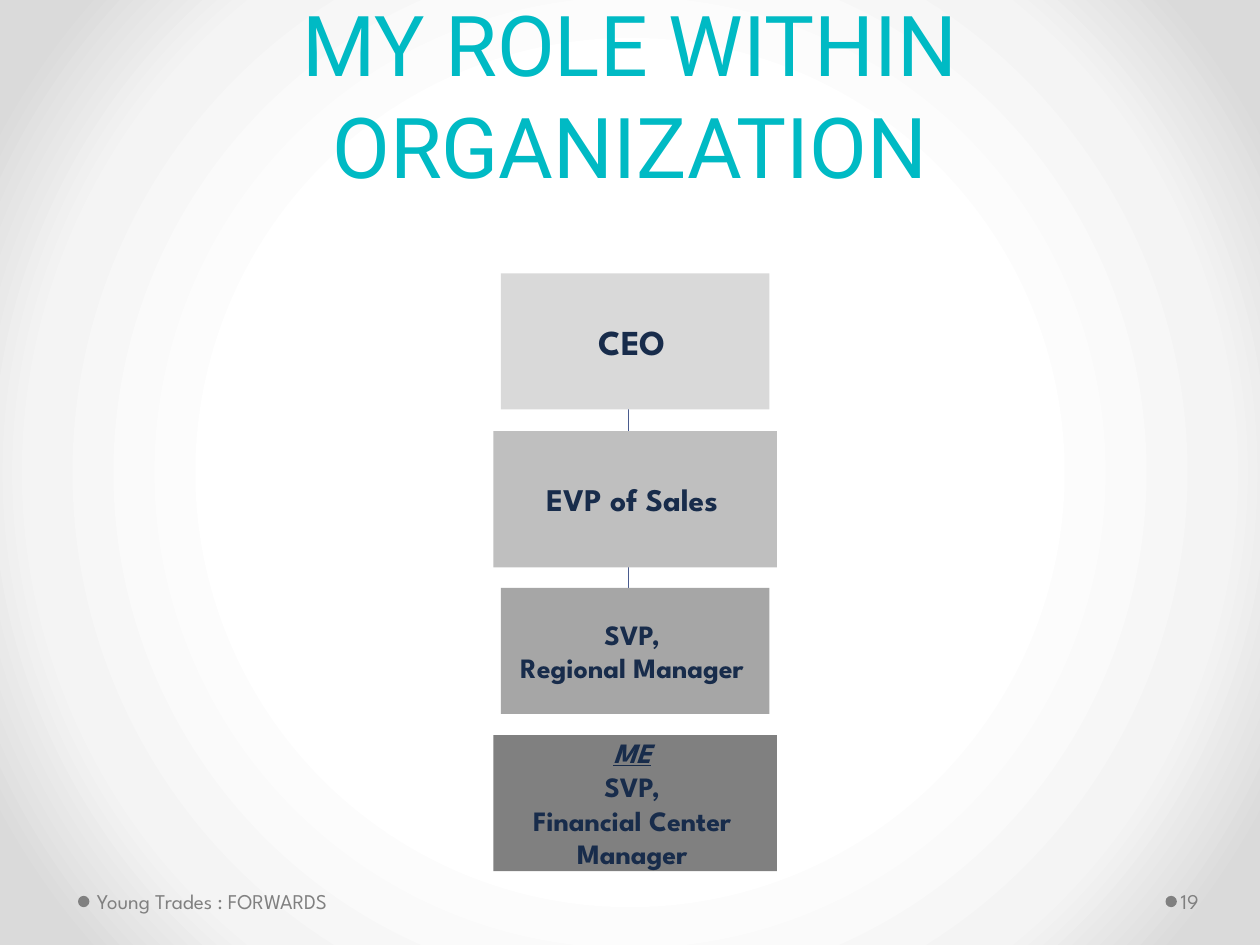
from pptx import Presentation
from pptx.dml.color import RGBColor
from pptx.enum.shapes import MSO_CONNECTOR, MSO_SHAPE
from pptx.enum.text import MSO_ANCHOR, PP_ALIGN
from pptx.oxml.ns import qn
from pptx.util import Pt
from lxml.etree import SubElement

TEAL = RGBColor(0x00, 0xBA, 0xC4)
NAVY = RGBColor(0x18, 0x2C, 0x4B)
LINE_BLUE = RGBColor(0x4A, 0x5B, 0x8E)
WHITE = RGBColor(0xFF, 0xFF, 0xFF)
PALE_GRAY = RGBColor(0xF4, 0xF4, 0xF4)
EDGE_GRAY = RGBColor(0xDA, 0xDA, 0xDA)
LIGHT_GRAY = RGBColor(0xD9, 0xD9, 0xD9)
SILVER = RGBColor(0xBF, 0xBF, 0xBF)
MID_GRAY = RGBColor(0xA6, 0xA6, 0xA6)
GRAY = RGBColor(0x80, 0x80, 0x80)


def write_text(shape, text, size, color, font="League Spartan", bold=False,
               align=PP_ALIGN.CENTER, anchor=MSO_ANCHOR.MIDDLE,
               left=3.6, right=7.2, spacing=None, emphasis=None):
    frame = shape.text_frame
    frame.word_wrap = True
    frame.vertical_anchor = anchor
    frame.margin_left, frame.margin_right = Pt(left), Pt(right)
    frame.margin_top = frame.margin_bottom = Pt(3.6)
    frame.text = text
    for paragraph in frame.paragraphs:
        paragraph.alignment = align
        paragraph.line_spacing = spacing
        for run in paragraph.runs:
            run.font.name = font
            run.font.size = Pt(size)
            run.font.bold = bold
            run.font.color.rgb = color
            if run.text == emphasis:
                run.font.italic = run.font.underline = True


presentation = Presentation()
presentation.slide_width, presentation.slide_height = Pt(720), Pt(540)
slide = presentation.slides.add_slide(presentation.slide_layouts[5])

slide.background.fill.gradient()
gradient = next(slide.element.iter(qn("a:gradFill")))
for child in list(gradient):
    gradient.remove(child)
stops = SubElement(gradient, qn("a:gsLst"))
for position, color in [(50, WHITE), (76, PALE_GRAY), (92, EDGE_GRAY)]:
    stop = SubElement(stops, qn("a:gs"), pos=str(position * 1000))
    SubElement(stop, qn("a:srgbClr"), val=str(color))
circle = SubElement(gradient, qn("a:path"), path="circle")
SubElement(circle, qn("a:fillToRect"), l="50000", t="50000", r="50000", b="50000")

title = slide.shapes.title
title.left, title.top, title.width, title.height = Pt(36), Pt(10.8), Pt(648), Pt(104.4)
write_text(title, "MY ROLE WITHIN ORGANIZATION", 48, TEAL, font="Roboto",
           anchor=MSO_ANCHOR.BOTTOM, left=7.2, spacing=Pt(58))

footers = [
    ("Young Trades : FORWARDS", 44.6, 51.8, 224, 3.6, 7.2),
    ("19", 666, 672.5, 44, 2.2, 3.6),
]
for text, dot_left, text_left, width, inset_left, inset_right in footers:
    dot = slide.shapes.add_shape(MSO_SHAPE.OVAL, Pt(dot_left), Pt(511.9), Pt(6.5), Pt(6.5))
    dot.shadow.inherit = False
    dot.fill.solid()
    dot.fill.fore_color.rgb = GRAY
    dot.line.fill.background()
    footer = slide.shapes.add_textbox(Pt(text_left), Pt(500.4), Pt(width), Pt(28.8))
    write_text(footer, text, 12, GRAY, align=PP_ALIGN.LEFT,
               left=inset_left, right=inset_right)

reporting_line = slide.shapes.add_connector(
    MSO_CONNECTOR.STRAIGHT, Pt(359.2), Pt(229), Pt(359.2), Pt(357.8))
reporting_line.line.color.rgb = LINE_BLUE
reporting_line.line.width = Pt(0.75)
SubElement(reporting_line.element.spPr, qn("a:effectLst"))

CENTER = 363
roles = [
    ("CEO", 20, 156.2, 153.4, 77.8, LIGHT_GRAY),
    ("EVP of Sales", 18, 246.4, 162, 77.8, SILVER),
    ("SVP,\nRegional Manager", 16, 336, 153.4, 72, MID_GRAY),
    ("ME\nSVP,\nFinancial Center Manager", 16, 420, 162, 77.8, GRAY),
]
for text, size, top, width, height, color in roles:
    box = slide.shapes.add_shape(
        MSO_SHAPE.RECTANGLE, Pt(CENTER - width / 2), Pt(top), Pt(width), Pt(height))
    box.shadow.inherit = False
    box.fill.solid()
    box.fill.fore_color.rgb = color
    box.line.fill.background()
    write_text(box, text, size, NAVY, bold=True, emphasis="ME")

presentation.save("out.pptx")
